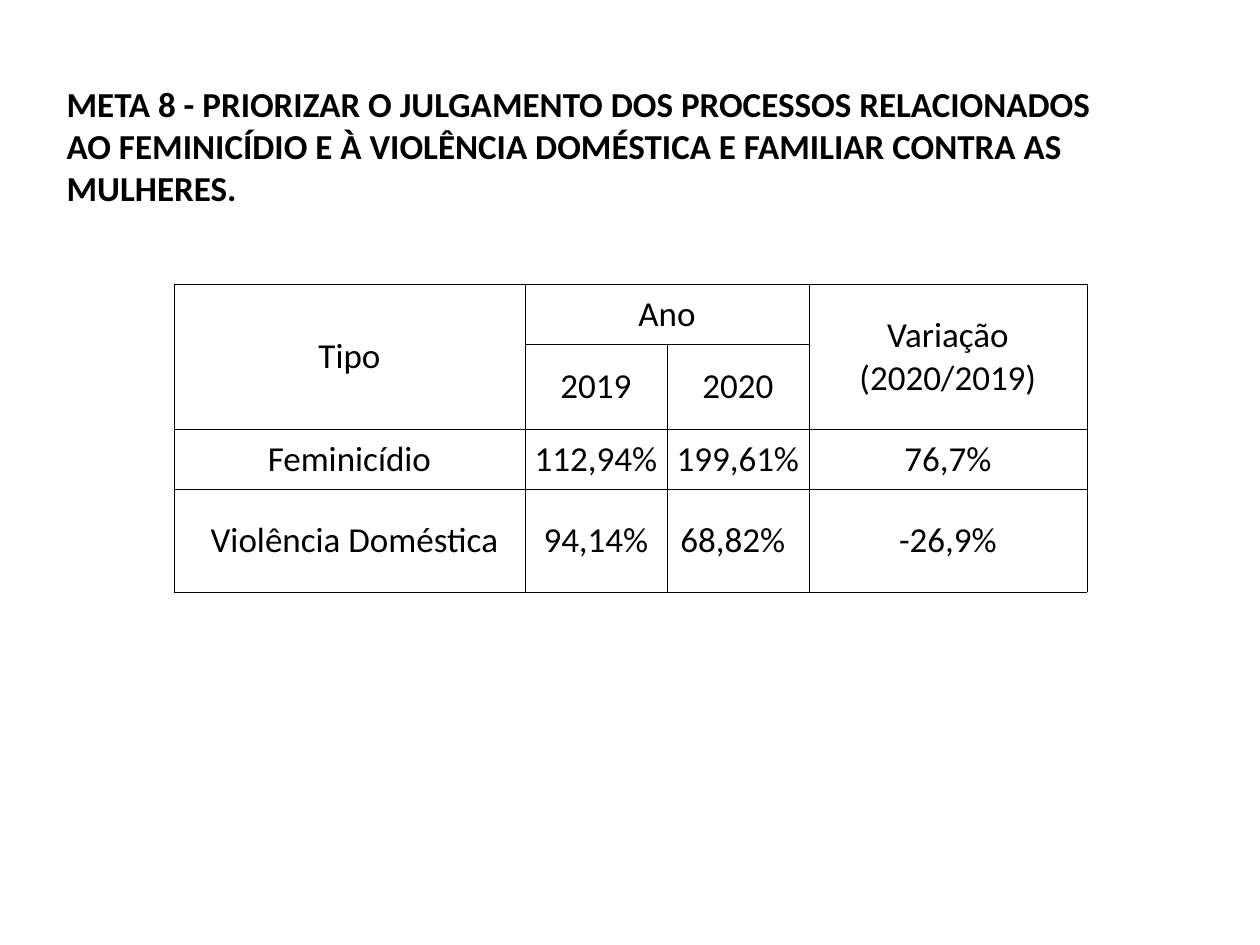
"""Builds the Meta 8 slide with its table of results by type and year."""
import lxml.etree
import pptx
import pptx.dml.color
import pptx.enum.text
import pptx.oxml
import pptx.oxml.ns
import pptx.util

PX = 914400 / 126
COLORS = {"ink": "000000", "paper": "FFFFFF"}
FONT = "Calibri"


def px(length):
    return pptx.util.Emu(round(length * PX))


def style_text(text_frame, alignment, bold):
    for paragraph in text_frame.paragraphs:
        paragraph.alignment = alignment
        for run in paragraph.runs:
            run.font.name = FONT
            run.font.size = pptx.util.Pt(20)
            run.font.bold = bold
            run.font.color.rgb = pptx.dml.color.RGBColor.from_string(COLORS["ink"])


presentation = pptx.Presentation()
presentation.slide_width = px(1260)
presentation.slide_height = px(945)
slide = presentation.slides.add_slide(presentation.slide_layouts[5])

goal = slide.shapes.title
goal.left, goal.top, goal.width, goal.height = px(54), px(76), px(1091), px(140)
goal.text_frame.text = (
    "META 8 - PRIORIZAR O JULGAMENTO DOS PROCESSOS RELACIONADOS AO FEMINICÍDIO "
    "E À VIOLÊNCIA DOMÉSTICA E FAMILIAR CONTRA AS MULHERES."
)
goal.text_frame.word_wrap = True
goal.text_frame.auto_size = pptx.enum.text.MSO_AUTO_SIZE.SHAPE_TO_FIT_TEXT
goal.text_frame.vertical_anchor = pptx.enum.text.MSO_ANCHOR.TOP
style_text(goal.text_frame, pptx.enum.text.PP_ALIGN.LEFT, True)

column_widths = [351, 142, 142, 278]
row_heights = [60, 60, 60, 103]
records = [
    ["Tipo", "Ano", "", "Variação (2020/2019)"],
    ["", "2019", "2020", ""],
    ["Feminicídio", "112,94%", "199,61%", "76,7%"],
    ["Violência Doméstica", "94,14%", "68,82%", "-26,9%"],
]
results = slide.shapes.add_table(
    len(row_heights), len(column_widths),
    px(174), px(284), px(sum(column_widths)), px(sum(row_heights)),
).table
results.first_row = False
results.horz_banding = False
for column, width in zip(results.columns, column_widths):
    column.width = px(width)
for row, height in zip(results.rows, row_heights):
    row.height = px(height)

for row_index, record in enumerate(records):
    for column_index, value in enumerate(record):
        cell = results.cell(row_index, column_index)
        cell.text_frame.text = value
        cell.vertical_anchor = pptx.enum.text.MSO_ANCHOR.MIDDLE
        cell.margin_left = cell.margin_right = cell.margin_top = px(1)
        cell.margin_bottom = 0
        cell.fill.solid()
        cell.fill.fore_color.rgb = pptx.dml.color.RGBColor.from_string(COLORS["paper"])
        style_text(cell.text_frame, pptx.enum.text.PP_ALIGN.CENTER, False)
        properties = cell._tc.get_or_add_tcPr()
        for position, side in enumerate(["lnL", "lnR", "lnT", "lnB"]):
            border = lxml.etree.Element(pptx.oxml.ns.qn(f"a:{side}"), w=str(pptx.util.Pt(0.5)))
            fill = lxml.etree.SubElement(border, pptx.oxml.ns.qn("a:solidFill"))
            lxml.etree.SubElement(fill, pptx.oxml.ns.qn("a:srgbClr"), val=COLORS["ink"])
            properties.insert(position, border)

results.cell(3, 0).margin_left = px(11)
results.cell(3, 2).margin_right = px(11)
for first, last in [((0, 0), (1, 0)), ((0, 1), (0, 2)), ((0, 3), (1, 3))]:
    results.cell(*first).merge(results.cell(*last))

presentation.save("out.pptx")
